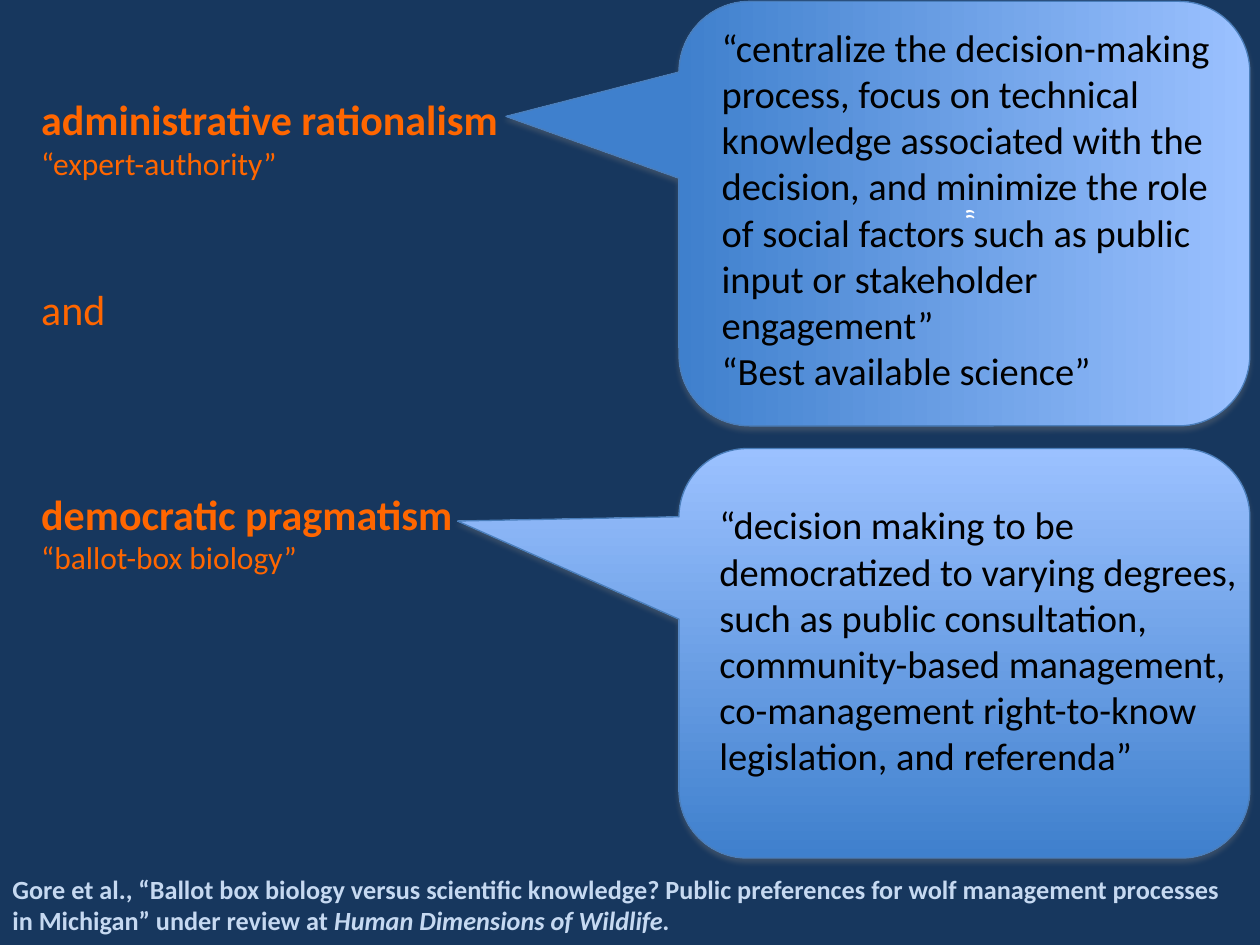
from lxml import etree
from pptx import Presentation
from pptx.dml.color import RGBColor
from pptx.enum.shapes import MSO_SHAPE
from pptx.enum.text import MSO_ANCHOR, PP_ALIGN
from pptx.oxml import parse_xml
from pptx.util import Pt

CALLOUT = MSO_SHAPE.ROUNDED_RECTANGULAR_CALLOUT
MIDDLE = MSO_ANCHOR.MIDDLE
CENTER = PP_ALIGN.CENTER
DRAWING = "http://schemas.openxmlformats.org/drawingml/2006/main"
COLORS = {
    "background": "17375E", "heading": "FF6600", "citation": "C6D9F1",
    "light": "9BC1FF", "dark": "3F80CD", "outline": "4A7EBB",
    "shadow": "808080", "quote": "000000", "mark": "FFFFFF",
}


def add_span(para, text, size, color, bold=False, italic=False):
    span = para.add_run()
    span.text = text
    span.font.name = "Calibri"
    span.font.size = Pt(size)
    span.font.bold = bold
    span.font.italic = italic
    span.font.color.rgb = RGBColor.from_string(COLORS[color])


def add_text(place, color, lines):
    """Each line is (space before, [(text, size, bold, italic), ...])."""
    box = page.shapes.add_textbox(*[Pt(length) for length in place])
    frame = box.text_frame
    frame.word_wrap = True
    for number, (gap, spans) in enumerate(lines):
        para = frame.add_paragraph() if number else frame.paragraphs[0]
        if gap:
            para.space_before = Pt(gap)
        for text, size, bold, italic in spans:
            add_span(para, text, size, color, bold, italic)


deck = Presentation()
deck.slide_width, deck.slide_height = Pt(720), Pt(540)
page = deck.slides.add_slide(deck.slide_layouts[6])
page.background.fill.solid()
page.background.fill.fore_color.rgb = RGBColor.from_string(COLORS["background"])

# The two approaches
add_text((16.5, 49.7, 280, 312.5), "heading", [
    (0, [("administrative rationalism", 24, True, False)]),
    (0, [("“expert-authority”", 18, False, False)]),
    (58.5, [("and", 24, False, False)]),
    (88, [("democratic pragmatism", 24, True, False)]),
    (0, [("“ballot-box biology”", 18, False, False)]),
])

# Citation
add_text((0, 495.4, 714.2, 44), "citation", [
    (0, [("Gore et al., “Ballot box biology versus scientific knowledge? "
          "Public preferences for wolf management processes", 15, True, False)]),
    (0, [("in Michigan” under review at ", 15, True, False),
         ("Human Dimensions of Wildlife.", 15, True, True)]),
])

# Callouts; the upper one is turned a quarter
callouts = [
    ((429.8, -41, 242.6, 326.2), 90, (-0.229, 0.803, 0.167), "“"),
    ((388, 256.3, 326.2, 234), 0, (-0.888, -0.323, 0.167), ""),
]
for place, turn, adjustments, mark in callouts:
    callout = page.shapes.add_shape(CALLOUT, *[Pt(length) for length in place])
    callout.rotation = turn
    for number, value in enumerate(adjustments):
        callout.adjustments[number] = value
    callout.fill.gradient()
    callout.fill.gradient_angle = 270
    for stop, shade in zip(callout.fill.gradient_stops, ("light", "dark")):
        stop.color.rgb = RGBColor.from_string(COLORS[shade])
    callout.line.color.rgb = RGBColor.from_string(COLORS["outline"])
    callout.line.width = Pt(0.75)

    # Soft shadow straight below
    callout.shadow.inherit = False
    effects = callout.element.spPr.find(f"{{{DRAWING}}}effectLst")
    effects.append(parse_xml(
        f'<a:outerShdw xmlns:a="{DRAWING}" blurRad="{Pt(3.1)}" dist="{Pt(1.8)}" '
        f'dir="5400000" rotWithShape="0"><a:srgbClr val="{COLORS["shadow"]}"/>'
        f'</a:outerShdw>'))
    etree.SubElement(effects[0][0], f"{{{DRAWING}}}alpha", val="35000")

    if mark:
        callout.text_frame.vertical_anchor = MIDDLE
        para = callout.text_frame.paragraphs[0]
        para.alignment = CENTER
        add_span(para, mark, 18, "mark")

# Quotations over the callouts
add_text((405.3, 10.1, 308.9, 220.3), "quote", [
    (0, [("“centralize the decision-making process, focus on technical "
          "knowledge associated with the decision, and minimize the role of "
          "social factors such as public input or stakeholder engagement”",
          22, False, False)]),
    (0, [("“Best available science”", 22, False, False)]),
])
add_text((404, 283, 314.6, 167), "quote", [
    (0, [("“decision making to be democratized to varying degrees, such as "
          "public consultation, community-based management, co-management "
          "right-to-know legislation, and referenda”", 22, False, False)]),
])

deck.save("out.pptx")
